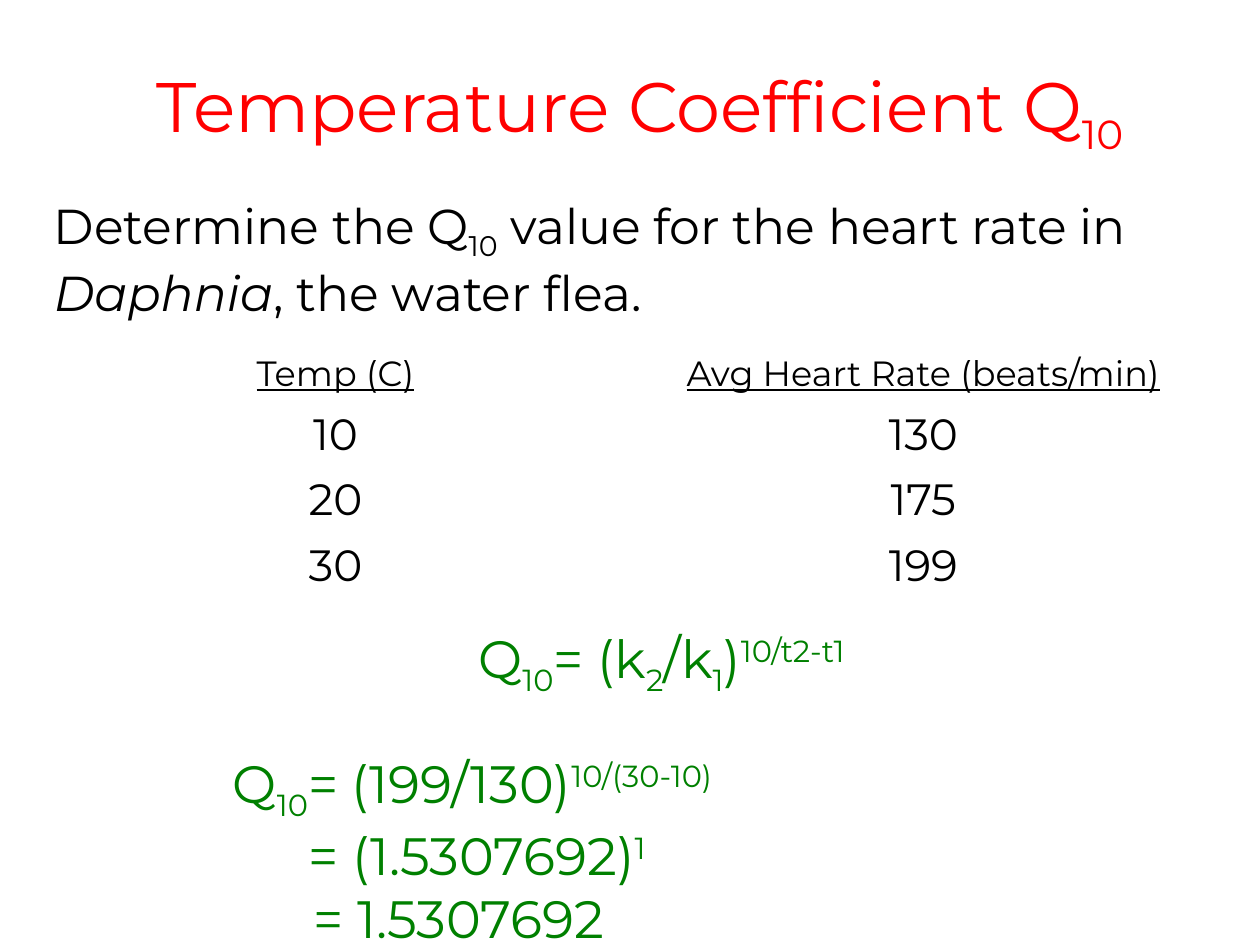
import pptx
import pptx.util
import pptx.dml.color
import pptx.enum.text

Inches, Pt = pptx.util.Inches, pptx.util.Pt
CENTER = pptx.enum.text.PP_ALIGN.CENTER
TOP = pptx.enum.text.MSO_ANCHOR.TOP
MIDDLE = pptx.enum.text.MSO_ANCHOR.MIDDLE
SUB, SUPER = -25000, 30000


def color(value):
    return pptx.dml.color.RGBColor.from_string(value)


def write(para, pieces, size, ink, align=None):
    """Fill a paragraph; each piece is text or (text, baseline shift)."""
    para.font.name, para.font.size = "Montserrat", Pt(size)
    para.font.color.rgb = color(ink)
    para.alignment = align
    for piece in pieces:
        text, shift = (piece, 0) if isinstance(piece, str) else piece
        span = para.add_run()
        span.text = text
        if shift:
            span.font._element.set("baseline", str(shift))


deck = pptx.Presentation()
deck.slide_width, deck.slide_height = Inches(10), Inches(7.5)
page = deck.slides.add_slide(deck.slide_layouts[5])

# Title
title = page.shapes.title
title.left, title.top = Inches(0.58), Inches(0.25)
title.width, title.height = Inches(9), Inches(1.25)
title.text_frame.vertical_anchor = MIDDLE
write(title.text_frame.paragraphs[0],
      ["Temperature Coefficient Q", ("10", SUB)], 40, "FF0000", CENTER)

# Question
box = page.shapes.add_textbox(Inches(0.33), Inches(1.5), Inches(9.42), Inches(1.2))
box.text_frame.word_wrap = True
question = box.text_frame.paragraphs[0]
write(question, ["Determine the Q", ("10", SUB), " value for the heart rate in ",
                 "Daphnia", ", the water flea."], 28, "000000")
question.runs[3].font.italic = True

# Heart rate table
rows = [("Temp (C)", "Avg Heart Rate (beats/min)"),
        ("10", "130"), ("20", "175"), ("30", "199")]
table = page.shapes.add_table(len(rows), 2, Inches(0.33), Inches(2.75),
                              Inches(9.33), Inches(2)).table
table.first_row = table.horz_banding = False
for row_index, values in enumerate(rows):
    heading = row_index == 0
    table.rows[row_index].height = Inches(0.44 if heading else 0.52)
    for column_index, value in enumerate(values):
        cell = table.cell(row_index, column_index)
        cell.fill.background()
        cell.vertical_anchor = TOP
        para = cell.text_frame.paragraphs[0]
        write(para, [value], 20 if heading else 25, "000000", CENTER)
        para.runs[0].font.underline = heading

# Formula and its solution: pieces, alignment, left indent, space before
lines = [
    (["Q", ("10", SUB), "= (k", ("2", SUB), "/k", ("1", SUB), ")",
      ("10/t2-t1", SUPER)], CENTER, 0, 0),
    (["Q", ("10", SUB), "= (199/130)", ("10/(30-10)", SUPER)], None, 0, 30.5),
    (["= (1.5307692)", ("1", SUPER)], None, 0.6, 0),
    (["= 1.5307692"], None, 0.64, 0),
]
box = page.shapes.add_textbox(Inches(1.75), Inches(4.92), Inches(7), Inches(2.54))
box.text_frame.word_wrap = True
for index, (pieces, align, indent, gap) in enumerate(lines):
    para = box.text_frame.add_paragraph() if index else box.text_frame.paragraphs[0]
    write(para, pieces, 30, "008000", align)
    para.space_before = Pt(gap)
    para._p.get_or_add_pPr().set("marL", str(Inches(indent)))

deck.save("out.pptx")
